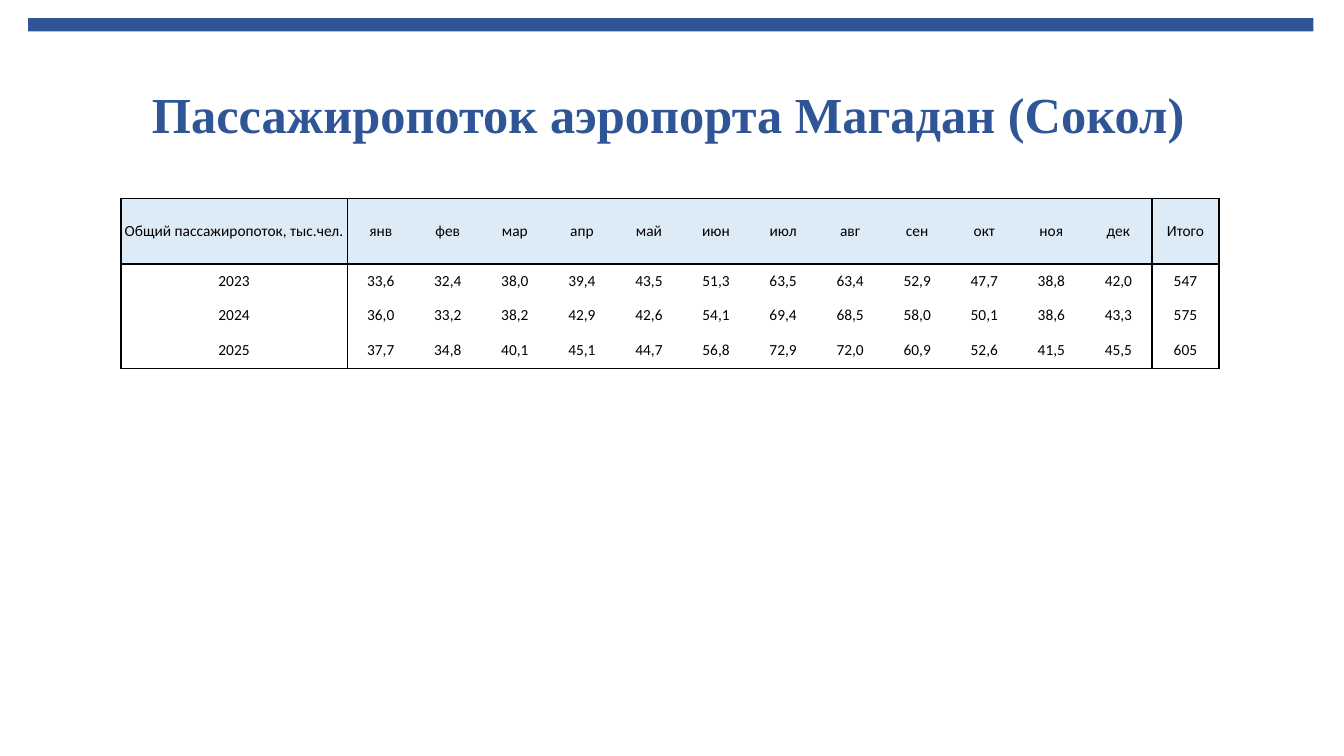
"""Build the slide with monthly passenger traffic of the Magadan airport."""
from dataclasses import dataclass

from lxml import etree
from pptx import Presentation
from pptx import util as u
from pptx.dml.color import RGBColor
from pptx.enum import shapes, text
from pptx.oxml import ns
from pptx.slide import Slide
from pptx.table import _Cell

COLORS = {"accent": "2F5597", "header": "DDEBF7", "ink": "000000"}
MONTHS = "янв фев мар апр май июн июл авг сен окт ноя дек".split()
ROW_HEIGHTS = (1.65, 0.86, 0.86, 0.91)
LABEL_WIDTH, VALUE_WIDTH = 5.7, 1.69
RULED_COLUMNS, RULED_ROWS = {0, 1, 13, 14}, {0, 1, 4}


@dataclass(frozen=True)
class TrafficRow:
    label: str
    months: list[str]
    total: str
    fill: str | None = None

    def values(self) -> list[str]:
        return [self.label, *self.months, self.total]


TRAFFIC = [
    TrafficRow("Общий пассажиропоток, тыс.чел.", MONTHS, "Итого", "header"),
    TrafficRow("2023", "33,6 32,4 38,0 39,4 43,5 51,3 63,5 63,4 52,9 47,7 38,8 42,0".split(), "547"),
    TrafficRow("2024", "36,0 33,2 38,2 42,9 42,6 54,1 69,4 68,5 58,0 50,1 38,6 43,3".split(), "575"),
    TrafficRow("2025", "37,7 34,8 40,1 45,1 44,7 56,8 72,9 72,0 60,9 52,6 41,5 45,5".split(), "605"),
]


def color(key: str) -> RGBColor:
    return RGBColor.from_string(COLORS[key])


def add_heading(slide: Slide) -> None:
    heading = slide.shapes.add_textbox(u.Cm(3.58), u.Cm(2.26), u.Cm(26.64), u.Cm(1.5))
    frame = heading.text_frame
    frame.word_wrap = False
    frame.auto_size = text.MSO_AUTO_SIZE.SHAPE_TO_FIT_TEXT
    line = frame.paragraphs[0]
    line.text = "Пассажиропоток аэропорта Магадан (Сокол)"
    line.line_spacing = 0.8
    line.font.name, line.font.size, line.font.bold = "Times New Roman", u.Pt(36), True
    line.font.color.rgb = color("accent")


def add_top_bar(slide: Slide) -> None:
    bar = slide.shapes.add_shape(
        shapes.MSO_SHAPE.RECTANGLE, u.Cm(0.71), u.Cm(0.46), u.Cm(32.39), u.Cm(0.33))
    bar.shadow.inherit = False
    bar.fill.solid()
    bar.fill.fore_color.rgb = color("accent")
    bar.line.fill.background()


def set_borders(cell: _Cell, row: int, column: int) -> None:
    ruled = {
        "a:lnL": column in RULED_COLUMNS,
        "a:lnR": column + 1 in RULED_COLUMNS,
        "a:lnT": row in RULED_ROWS,
        "a:lnB": row + 1 in RULED_ROWS,
    }
    properties = cell._tc.get_or_add_tcPr()
    for position, (tag, visible) in enumerate(ruled.items()):
        border = etree.Element(ns.qn(tag), w=str(u.Pt(1)))
        if visible:
            ink = etree.SubElement(border, ns.qn("a:solidFill"))
            etree.SubElement(ink, ns.qn("a:srgbClr"), val=COLORS["ink"])
        else:
            etree.SubElement(border, ns.qn("a:noFill"))
        properties.insert(position, border)


def fill_cell(cell: _Cell, value: str, fill: str | None) -> None:
    cell.margin_left = cell.margin_right = cell.margin_top = cell.margin_bottom = 0
    cell.vertical_anchor = text.MSO_ANCHOR.MIDDLE
    if fill:
        cell.fill.solid()
        cell.fill.fore_color.rgb = color(fill)
    else:
        cell.fill.background()
    line = cell.text_frame.paragraphs[0]
    line.text = value
    line.alignment = text.PP_ALIGN.CENTER
    line.font.name, line.font.size, line.font.bold = "Calibri", u.Pt(11), False
    line.font.color.rgb = color("ink")


def add_traffic_table(slide: Slide, rows: list[TrafficRow]) -> None:
    widths = [LABEL_WIDTH] + [VALUE_WIDTH] * (len(MONTHS) + 1)
    traffic = slide.shapes.add_table(
        len(rows), len(widths), u.Cm(3.05), u.Cm(5), u.Cm(sum(widths)), u.Cm(sum(ROW_HEIGHTS))).table
    traffic.first_row = traffic.horz_banding = False
    for column, width in zip(traffic.columns, widths):
        column.width = u.Cm(width)
    for row, (record, height) in enumerate(zip(rows, ROW_HEIGHTS)):
        traffic.rows[row].height = u.Cm(height)
        for column, value in enumerate(record.values()):
            cell = traffic.cell(row, column)
            fill_cell(cell, value, record.fill)
            set_borders(cell, row, column)


def main() -> None:
    deck = Presentation()
    deck.slide_width, deck.slide_height = u.Cm(33.87), u.Cm(19.05)
    slide = deck.slides.add_slide(deck.slide_layouts[6])
    add_heading(slide)
    add_top_bar(slide)
    add_traffic_table(slide, TRAFFIC)
    deck.save("out.pptx")


if __name__ == "__main__":
    main()
